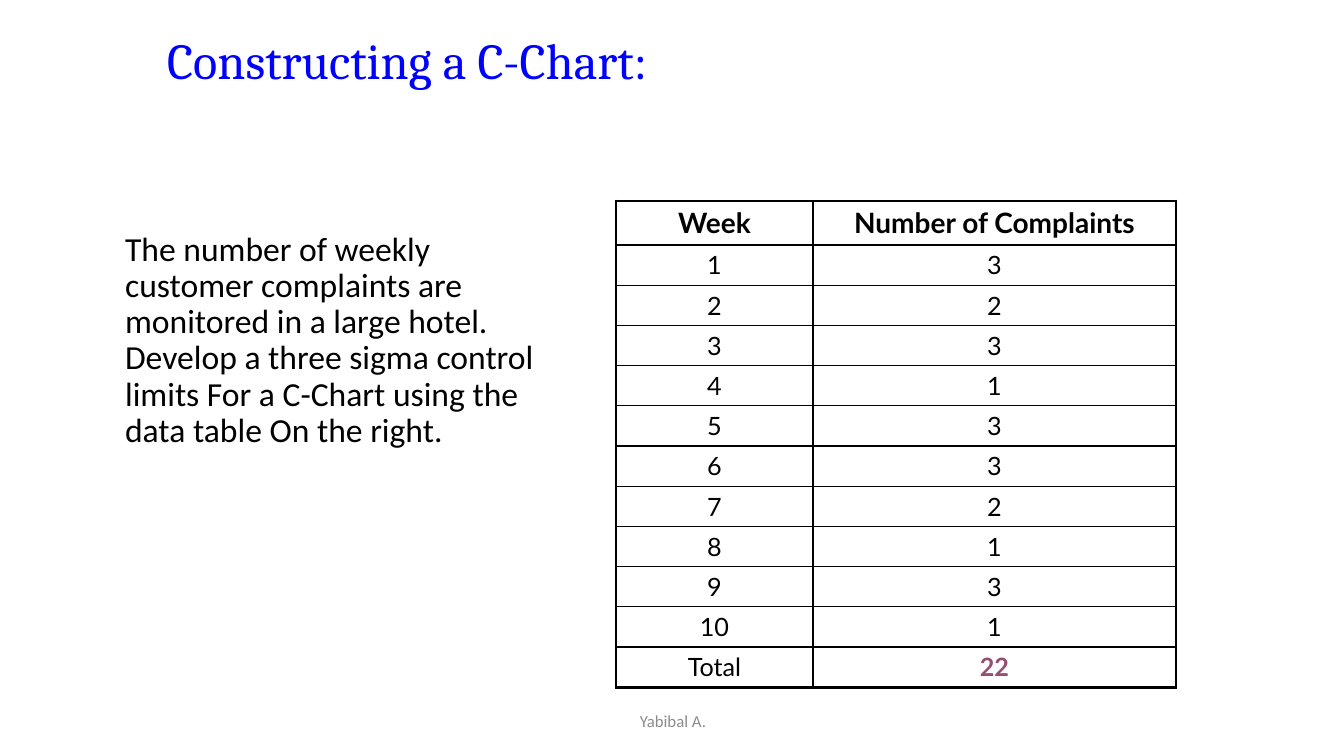
import pptx
import pptx.util
import pptx.dml.color
import pptx.enum.text
import pptx.oxml
import pptx.oxml.ns

PX = 914400 / 100.8
COLORS = {"title": "0000FF", "text": "000000", "total": "954F72", "foot": "8C8C8C"}
ALIGN = pptx.enum.text.PP_ALIGN
ANCHOR = pptx.enum.text.MSO_ANCHOR


def px(n):
    return pptx.util.Emu(round(n * PX))


def write(frame, text, size, font, color="text", bold=False, align=ALIGN.LEFT, space=None):
    frame.word_wrap = True
    para = frame.paragraphs[0]
    para.alignment = align
    para.line_spacing = space
    run = para.add_run()
    run.text = text
    run.font.size = pptx.util.Pt(size)
    run.font.name = font
    run.font.bold = bold
    run.font.color.rgb = pptx.dml.color.RGBColor.from_string(COLORS[color])
    return para


deck = pptx.Presentation()
deck.slide_width, deck.slide_height = px(1344), px(756)
slide = deck.slides.add_slide(deck.slide_layouts[1])

# Title and problem text
title, body = slide.placeholders
title.left, title.top, title.width, title.height = px(157), px(-17), px(1145), px(161)
body.left, body.top, body.width, body.height = px(90), px(227), px(471), px(446)
for holder in (title, body):
    holder.text_frame.auto_size = pptx.enum.text.MSO_AUTO_SIZE.NONE
title.text_frame.vertical_anchor = ANCHOR.MIDDLE
write(title.text_frame, "Constructing a C-Chart:", 36, "Cambria", "title", space=0.9)
task = write(
    body.text_frame,
    "The number of weekly customer complaints are monitored in a large hotel. "
    "Develop a three sigma control limits For a C-Chart using the data table On the right.",
    24, "Calibri", space=0.9)
task.space_before = pptx.util.Pt(10)
props = task._p.get_or_add_pPr()
props.set("marL", str(px(25)))
props.set("indent", "0")
props.append(pptx.oxml.parse_xml(f'<a:buNone {pptx.oxml.ns.nsdecls("a")}/>'))

# Complaints table
counts = [3, 2, 3, 1, 3, 3, 2, 1, 3, 1]
rows = [("Week", "Number of Complaints"), *enumerate(counts, 1), ("Total", sum(counts))]
last = len(rows) - 1
table = slide.shapes.add_table(len(rows), 2, px(616), px(201), px(560), px(484)).table
table.horz_banding = False
table.first_row = False
for col, width in zip(table.columns, (197, 363)):
    col.width = px(width)
for r, row in enumerate(rows):
    table.rows[r].height = px(40 if r else 44)
    for c, value in enumerate(row):
        cell = table.cell(r, c)
        cell.margin_left = cell.margin_right = px(13)
        cell.margin_top = cell.margin_bottom = px(5)
        total = r == last and c == 1
        write(cell.text_frame, str(value), 18 if r else 20, "Lato",
              "total" if total else "text", bold=r == 0 or total, align=ALIGN.CENTER)
        # Thick outer frame, thin inner lines
        outer = {"L": c == 0, "R": c == 1, "T": r == 0, "B": r == last}
        for side, thick in outer.items():
            cell._tc.get_or_add_tcPr().append(pptx.oxml.parse_xml(
                f'<a:ln{side} {pptx.oxml.ns.nsdecls("a")} w="{28575 if thick else 12700}">'
                f'<a:solidFill><a:srgbClr val="{COLORS["text"]}"/></a:solidFill></a:ln{side}>'))
        cell.fill.background()

# Footer
foot = slide.shapes.add_textbox(px(446), px(701), px(454), px(40)).text_frame
foot.vertical_anchor = ANCHOR.MIDDLE
write(foot, "Yabibal A.", 12, "Calibri", "foot", align=ALIGN.CENTER)

deck.save("out.pptx")
